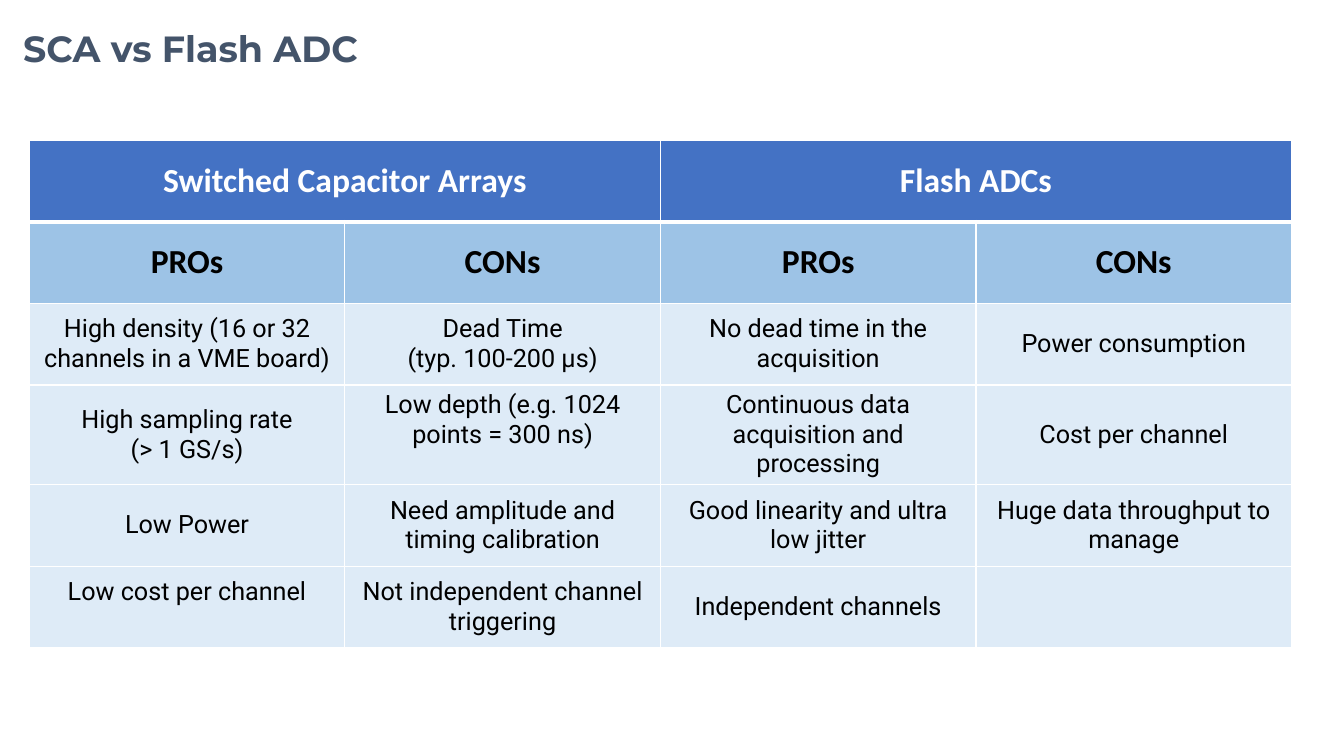
from dataclasses import dataclass

from lxml.etree import SubElement
from pptx import Presentation
from pptx.dml.color import RGBColor
from pptx.enum.text import MSO_ANCHOR, PP_ALIGN
from pptx.oxml.ns import qn
from pptx.util import Inches, Pt


@dataclass(frozen=True)
class Theme:
    title_font: str = "Montserrat"
    head_font: str = "Calibri"
    body_font: str = "Roboto"
    title_size: int = 26
    head_size: int = 24
    body_size: int = 18
    title: str = "44546A"
    header: str = "4472C4"
    subheader: str = "9DC3E6"
    body: str = "DEEBF7"
    white: str = "FFFFFF"
    black: str = "000000"


THEME = Theme()

GROUPS = ["Switched Capacitor Arrays", "Flash ADCs"]
SIDES = ["PROs", "CONs"]
POINTS = [
    ["High density (16 or 32 channels in a VME board)",
     "Dead Time\n(typ. 100-200 µs)",
     "No dead time in the acquisition", "Power consumption"],
    ["High sampling rate\n(> 1 GS/s)",
     "Low depth (e.g. 1024 points = 300 ns)",
     "Continuous data acquisition and processing", "Cost per channel"],
    ["Low Power", "Need amplitude and timing calibration",
     "Good linearity and ultra low jitter", "Huge data throughput to manage"],
    ["Low cost per channel", "Not independent channel triggering",
     "Independent channels", ""],
]
# Cells (row, column) whose text sits half a line above the middle
RAISED = {(3, 1), (5, 0)}


def set_font(p, name, size, color, bold):
    p.font.name = name
    p.font.size = Pt(size)
    p.font.bold = bold
    p.font.color.rgb = RGBColor.from_string(color)


def set_borders(cell, bottom=1):
    """Draw white cell borders; call before the fill is set."""
    tc_pr = cell._tc.get_or_add_tcPr()
    for side, width in (("L", 1), ("R", 1), ("T", 1), ("B", bottom)):
        ln = SubElement(tc_pr, qn(f"a:ln{side}"), w=str(Pt(width)))
        fill = SubElement(ln, qn("a:solidFill"))
        SubElement(fill, qn("a:srgbClr"), val=THEME.white)


def style_cell(cell, text, fill, font, size, color, bold, bottom=1):
    set_borders(cell, bottom)
    cell.fill.solid()
    cell.fill.fore_color.rgb = RGBColor.from_string(fill)
    cell.vertical_anchor = MSO_ANCHOR.MIDDLE
    cell.text = text
    for p in cell.text_frame.paragraphs:
        p.alignment = PP_ALIGN.CENTER
        set_font(p, font, size, color, bold)


def add_title(slide, text, left, top, width, height):
    title = slide.shapes.title
    title.left, title.top = Inches(left), Inches(top)
    title.width, title.height = Inches(width), Inches(height)
    tf = title.text_frame
    tf.text = text
    tf.word_wrap = True
    tf.vertical_anchor = MSO_ANCHOR.MIDDLE
    p = tf.paragraphs[0]
    p.alignment = PP_ALIGN.LEFT
    set_font(p, THEME.title_font, THEME.title_size, THEME.title, True)


def add_comparison(slide, left, top, width, row_height):
    n_rows, n_cols = len(POINTS) + 2, len(GROUPS) * len(SIDES)
    table = slide.shapes.add_table(
        n_rows, n_cols, Inches(left), Inches(top),
        Inches(width), Inches(row_height * n_rows)).table

    # Group headings, each over a pair of columns
    for i, group in enumerate(GROUPS):
        first = i * len(SIDES)
        cells = [table.cell(0, first + j) for j in range(len(SIDES))]
        cells[0].merge(cells[-1])
        for cell, text in zip(cells, [group, ""]):
            style_cell(cell, text, THEME.header, THEME.head_font,
                       THEME.head_size, THEME.white, True, bottom=3)

    # Pros and cons headings
    for col, side in enumerate(SIDES * len(GROUPS)):
        style_cell(table.cell(1, col), side, THEME.subheader, THEME.head_font,
                   THEME.head_size, THEME.black, True)

    # Points
    for row, points in enumerate(POINTS, start=2):
        for col, point in enumerate(points):
            cell = table.cell(row, col)
            style_cell(cell, point, THEME.body, THEME.body_font,
                       THEME.body_size, THEME.black, False)
            if (row, col) in RAISED:
                cell.margin_bottom = Inches(0.35)


def main():
    prs = Presentation()
    prs.slide_width, prs.slide_height = Inches(13.33), Inches(7.5)
    slide = prs.slides.add_slide(prs.slide_layouts[5])
    add_title(slide, "SCA vs Flash ADC", 0.13, 0.21, 9.37, 0.54)
    add_comparison(slide, 0.29, 1.39, 12.52, 0.81)
    prs.save("out.pptx")


if __name__ == "__main__":
    main()
